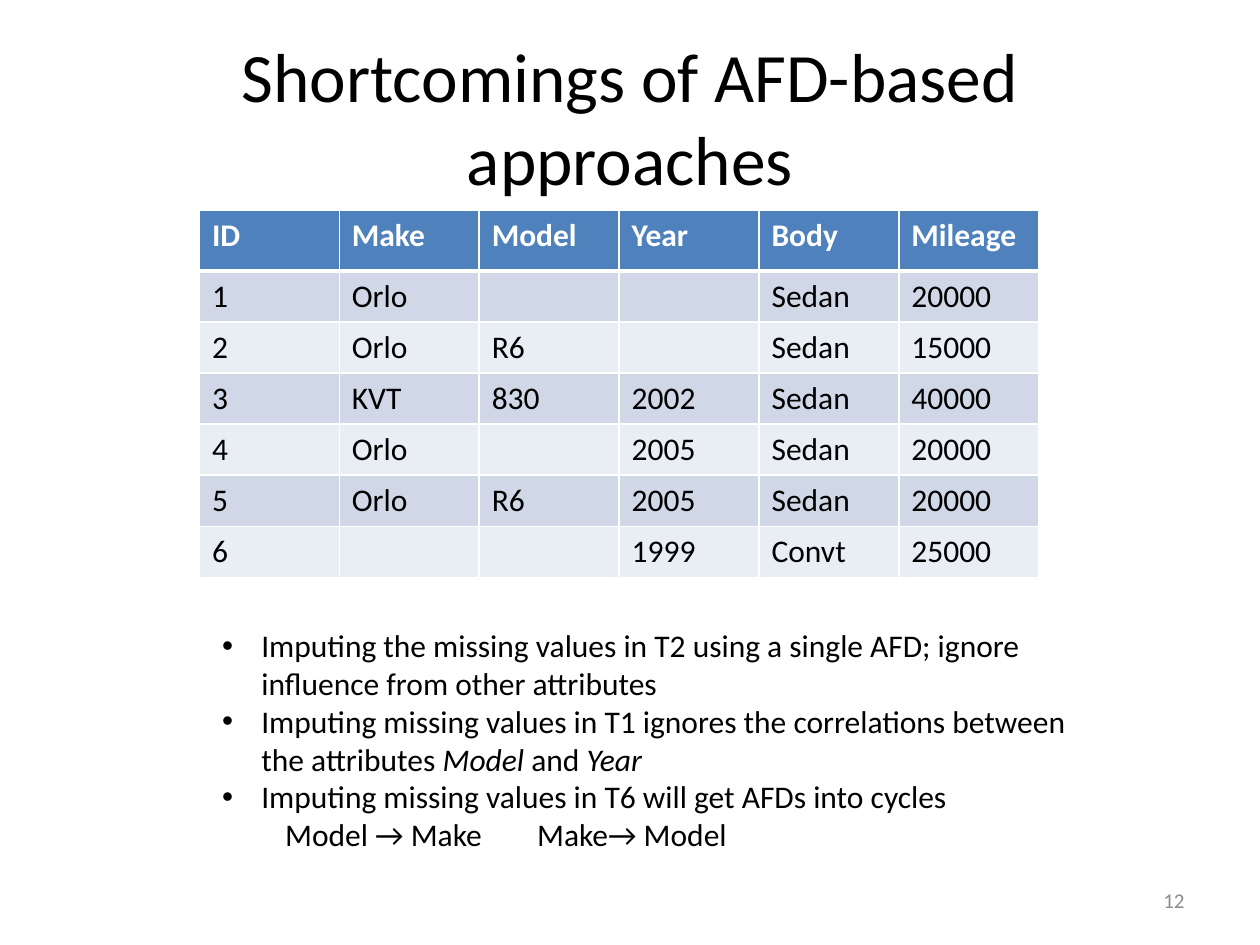
from dataclasses import dataclass

import pptx
import pptx.dml.color
import pptx.enum.text
import pptx.oxml
import pptx.oxml.ns
import pptx.util
from pptx.dml.color import RGBColor
from pptx.util import Cm, Pt

FONT = "Calibri"
BLACK = RGBColor(0, 0, 0)
WHITE = RGBColor(0xFF, 0xFF, 0xFF)
GREY = RGBColor(0x8C, 0x8C, 0x8C)
BLUE = RGBColor(0x4F, 0x81, 0xBD)
BANDS = (RGBColor(0xD0, 0xD8, 0xE8), RGBColor(0xE9, 0xED, 0xF4))

ALIGN = pptx.enum.text.PP_ALIGN
ANCHOR = pptx.enum.text.MSO_ANCHOR
FIT = pptx.enum.text.MSO_AUTO_SIZE


@dataclass
class Run:
    text: str
    size: float = 18
    color: RGBColor = BLACK
    bold: bool = False
    italic: bool = False


@dataclass
class Para:
    runs: list[Run]
    align: ALIGN = ALIGN.LEFT
    bullet: bool = False


@dataclass
class Box:
    left: float
    top: float
    width: float
    height: float
    paras: list[Para]
    anchor: ANCHOR = ANCHOR.TOP
    fit: FIT = FIT.NONE


HEAD = ("ID", "Make", "Model", "Year", "Body", "Mileage")
CARS = (
    ("1", "Orlo", "", "", "Sedan", "20000"),
    ("2", "Orlo", "R6", "", "Sedan", "15000"),
    ("3", "KVT", "830", "2002", "Sedan", "40000"),
    ("4", "Orlo", "", "2005", "Sedan", "20000"),
    ("5", "Orlo", "R6", "2005", "Sedan", "20000"),
    ("6", "", "", "1999", "Convt", "25000"),
)

TITLE = Box(1.27, 0.76, 22.86, 3.18, [
    Para([Run("Shortcomings of AFD-based approaches", 39.6)], ALIGN.CENTER),
], ANCHOR.MIDDLE)
NOTES = Box(4.23, 12.5, 18.2, 5.64, [
    Para([Run("Imputing the missing values in T2 using a single AFD; "
              "ignore influence from other attributes")], bullet=True),
    Para([Run("Imputing missing values in T1 ignores the correlations "
              "between the attributes "),
          Run("Model", italic=True),
          Run(" and "),
          Run("Year", italic=True)], bullet=True),
    Para([Run("Imputing missing values in T6 will get AFDs into cycles")],
         bullet=True),
    Para([Run("\tModel → Make\tMake→ Model")]),
], fit=FIT.SHAPE_TO_FIT_TEXT)
NUMBER = Box(18.2, 17.65, 5.93, 1.01, [
    Para([Run("12", 12, GREY)], ALIGN.RIGHT),
], ANCHOR.MIDDLE)


def add_run(par, run: Run) -> None:
    item = par.add_run()
    item.text = run.text
    font = item.font
    font.name = FONT
    font.size = Pt(run.size)
    font.bold = run.bold
    font.italic = run.italic
    font.color.rgb = run.color


def add_mark(par) -> None:
    """Give a paragraph a round bullet and a hanging indent."""
    props = par._p.get_or_add_pPr()
    props.set("marL", str(Cm(0.79)))
    props.set("indent", str(-Cm(0.79)))
    for tag, key, value in (("a:buFont", "typeface", "Arial"),
                            ("a:buChar", "char", "•")):
        node = pptx.oxml.parse_xml(
            f'<{tag} {pptx.oxml.ns.nsdecls("a")} {key}="{value}"/>')
        props.append(node)


def add_box(slide, box: Box) -> None:
    shape = slide.shapes.add_textbox(
        Cm(box.left), Cm(box.top), Cm(box.width), Cm(box.height))
    frame = shape.text_frame
    frame.word_wrap = True
    frame.auto_size = box.fit
    frame.vertical_anchor = box.anchor
    for i, para in enumerate(box.paras):
        par = frame.add_paragraph() if i else frame.paragraphs[0]
        par.alignment = para.align
        if para.bullet:
            add_mark(par)
        for run in para.runs:
            add_run(par, run)


def add_edges(cell, top: float, base: float) -> None:
    """Draw white cell borders; top and base are widths in points."""
    props = cell._tc.get_or_add_tcPr()
    sides = (("L", 1), ("R", 1), ("T", top), ("B", base))
    for i, (side, width) in enumerate(sides):
        node = pptx.oxml.parse_xml(
            f'<a:ln{side} {pptx.oxml.ns.nsdecls("a")} w="{Pt(width)}">'
            f'<a:solidFill><a:srgbClr val="{WHITE}"/></a:solidFill>'
            f'</a:ln{side}>')
        props.insert(i, node)


def add_grid(slide) -> None:
    rows = (HEAD, *CARS)
    frame = slide.shapes.add_table(
        len(rows), len(HEAD), Cm(4.02), Cm(4.24), Cm(16.92), Cm(7.4))
    table = frame.table
    for col in table.columns:
        col.width = Cm(2.82)
    for r, row in enumerate(rows):
        head = r == 0
        table.rows[r].height = Cm(1.22 if head else 1.03)
        for c, text in enumerate(row):
            cell = table.cell(r, c)
            cell.fill.solid()
            cell.fill.fore_color.rgb = BLUE if head else BANDS[(r - 1) % 2]
            add_edges(cell, 3 if r == 1 else 1, 3 if head else 1)
            if text:
                run = Run(text, color=WHITE if head else BLACK, bold=head)
                add_run(cell.text_frame.paragraphs[0], run)


def main() -> None:
    deck = pptx.Presentation()
    deck.slide_width = Cm(25.4)
    deck.slide_height = Cm(19.05)
    slide = deck.slides.add_slide(deck.slide_layouts[6])
    add_box(slide, TITLE)
    add_grid(slide)
    add_box(slide, NOTES)
    add_box(slide, NUMBER)
    deck.save("out.pptx")


if __name__ == "__main__":
    main()
